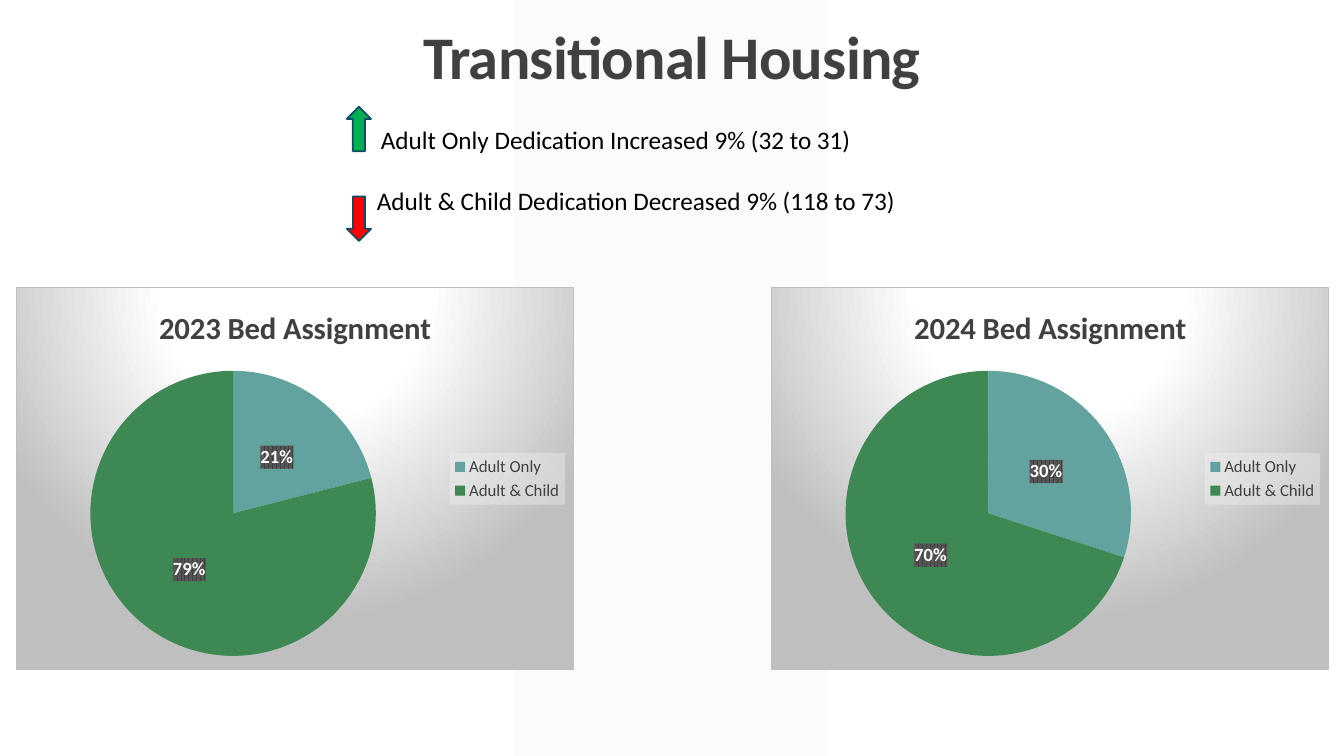
from dataclasses import dataclass

from lxml import etree
from pptx import Presentation
from pptx.chart.data import CategoryChartData
from pptx.dml.color import RGBColor
from pptx.enum.chart import XL_CHART_TYPE, XL_LABEL_POSITION, XL_LEGEND_POSITION
from pptx.enum.shapes import MSO_SHAPE
from pptx.enum.text import MSO_ANCHOR, PP_ALIGN
from pptx.oxml import parse_xml
from pptx.oxml.ns import nsdecls, qn
from pptx.util import Inches, Pt


@dataclass(frozen=True)
class Theme:
    font: str = "Calibri"
    text: str = "000000"
    heading: str = "404040"
    label: str = "FFFFFF"
    label_back: str = "595959"
    panel: str = "F2F2F2"
    chart_light: str = "FFFFFF"
    chart_edge: str = "BFBFBF"
    arrow_line: str = "0C4C64"
    up: str = "00B050"
    down: str = "FF0000"
    slices: tuple = ("62A39F", "3E8853")
    title_size: float = 43.2
    chart_title_size: float = 22
    body_size: float = 18
    label_size: float = 13.3
    legend_size: float = 12
    chart_size: float = 10


def color_xml(color, alpha=100):
    return f'<a:srgbClr val="{color}"><a:alpha val="{alpha * 1000}"/></a:srgbClr>'


def add_chart_fill(parent, fill, line="<a:ln><a:noFill/></a:ln>"):
    """Give a chart part its fill; the schema wants it just before the text properties."""
    xml = f'<c:spPr {nsdecls("c", "a")}>{fill}{line}</c:spPr>'
    parent.find(qn("c:txPr")).addprevious(parse_xml(xml))


class SlideBuilder:
    def __init__(self, slide, theme):
        self.slide = slide
        self.theme = theme

    def set_font(self, font, size, color, bold=False):
        font.name = self.theme.font
        font.size = Pt(size)
        font.bold = bold
        font.color.rgb = RGBColor.from_string(color)

    def shape(self, kind, left, top, width, height, color, line=None):
        sp = self.slide.shapes.add_shape(
            kind, Inches(left), Inches(top), Inches(width), Inches(height))
        sp.shadow.inherit = False
        sp.fill.solid()
        sp.fill.fore_color.rgb = RGBColor.from_string(color)
        if line:
            sp.line.color.rgb = RGBColor.from_string(line)
            sp.line.width = Pt(1.25)
        else:
            sp.line.fill.background()
        return sp

    def band(self):
        sp = self.shape(MSO_SHAPE.RECTANGLE, 5.1, 0, 3.12, 7.5, self.theme.panel)
        color = sp.fill._xPr.find(".//" + qn("a:srgbClr"))
        etree.SubElement(color, qn("a:alpha")).set("val", "30000")

    def arrow(self, top, color, rotation=0):
        sp = self.shape(MSO_SHAPE.UP_ARROW, 3.44, top, 0.24, 0.44,
                        color, self.theme.arrow_line)
        sp.rotation = rotation

    def text(self, text, left, top, width, height, size):
        tf = self.slide.shapes.add_textbox(
            Inches(left), Inches(top), Inches(width), Inches(height)).text_frame
        tf.word_wrap = True
        p = tf.paragraphs[0]
        p.text = text
        self.set_font(p.font, size, self.theme.text)
        return tf

    def title(self, text):
        tf = self.text(text, 0, 0.17, 13.33, 0.8, self.theme.title_size)
        tf.vertical_anchor = MSO_ANCHOR.BOTTOM
        p = tf.paragraphs[0]
        p.alignment = PP_ALIGN.CENTER
        p.line_spacing = 0.9
        self.set_font(p.font, self.theme.title_size, self.theme.heading, bold=True)
        p.runs[0]._r.get_or_add_rPr().set("spc", "-50")

    def pie(self, title, left, values):
        th = self.theme
        data = CategoryChartData()
        data.categories = ["Adult Only", "Adult & Child"]
        data.add_series(title, values)
        chart = self.slide.shapes.add_chart(
            XL_CHART_TYPE.PIE, Inches(left), Inches(2.85),
            Inches(5.53), Inches(3.8), data).chart
        self.set_font(chart.font, th.chart_size, th.text)

        chart.has_title = True
        p = chart.chart_title.text_frame.paragraphs[0]
        p.text = title
        self.set_font(p.font, th.chart_title_size, th.heading, bold=True)

        chart.has_legend = True
        chart.legend.position = XL_LEGEND_POSITION.RIGHT
        chart.legend.include_in_layout = False
        self.set_font(chart.legend.font, th.legend_size, th.heading)

        plot = chart.plots[0]
        plot.vary_by_categories = True
        series = plot.series[0]
        for i, color in enumerate(th.slices):
            fill = series.points[i].format.fill
            fill.solid()
            fill.fore_color.rgb = RGBColor.from_string(color)

        labels = series.data_labels
        labels.show_percentage = True
        labels.show_value = False
        labels.number_format = "0%"
        labels.number_format_is_linked = False
        labels.position = XL_LABEL_POSITION.CENTER
        self.set_font(labels.font, th.label_size, th.label, bold=True)
        self.pie_backgrounds(chart)

    def pie_backgrounds(self, chart):
        th = self.theme
        root = chart.element
        stops = "".join(
            f'<a:gs pos="{pos * 1000}">{color_xml(color)}</a:gs>'
            for pos, color in ((0, th.chart_light), (39, th.chart_light), (100, th.chart_edge)))
        add_chart_fill(
            root,
            f'<a:gradFill><a:gsLst>{stops}</a:gsLst><a:path path="circle">'
            '<a:fillToRect l="50000" t="-80000" r="50000" b="180000"/></a:path></a:gradFill>',
            f'<a:ln w="9525"><a:solidFill>{color_xml(th.chart_edge)}</a:solidFill></a:ln>')
        add_chart_fill(root.find(".//" + qn("c:legend")),
                       f"<a:solidFill>{color_xml(th.panel, 39)}</a:solidFill>")
        add_chart_fill(root.find(".//" + qn("c:ser")).find(qn("c:dLbls")),
                       f'<a:pattFill prst="pct75"><a:fgClr>{color_xml(th.heading)}</a:fgClr>'
                       f"<a:bgClr>{color_xml(th.label_back)}</a:bgClr></a:pattFill>")


def main():
    prs = Presentation()
    prs.slide_width, prs.slide_height = Inches(13.33), Inches(7.5)
    theme = Theme()
    s = SlideBuilder(prs.slides.add_slide(prs.slide_layouts[6]), theme)
    s.band()
    s.title("Transitional Housing")
    s.pie("2023 Bed Assignment", 0.16, (21, 79))
    s.pie("2024 Bed Assignment", 7.65, (30, 70))
    s.text("Adult Only Dedication Increased 9% (32 to 31)",
           3.68, 1.18, 6.34, 0.4, theme.body_size)
    s.text("Adult & Child Dedication Decreased 9% (118 to 73)",
           3.64, 1.79, 6.34, 0.4, theme.body_size)
    s.arrow(1.06, theme.up)
    s.arrow(1.95, theme.down, rotation=180)
    prs.save("out.pptx")


if __name__ == "__main__":
    main()
